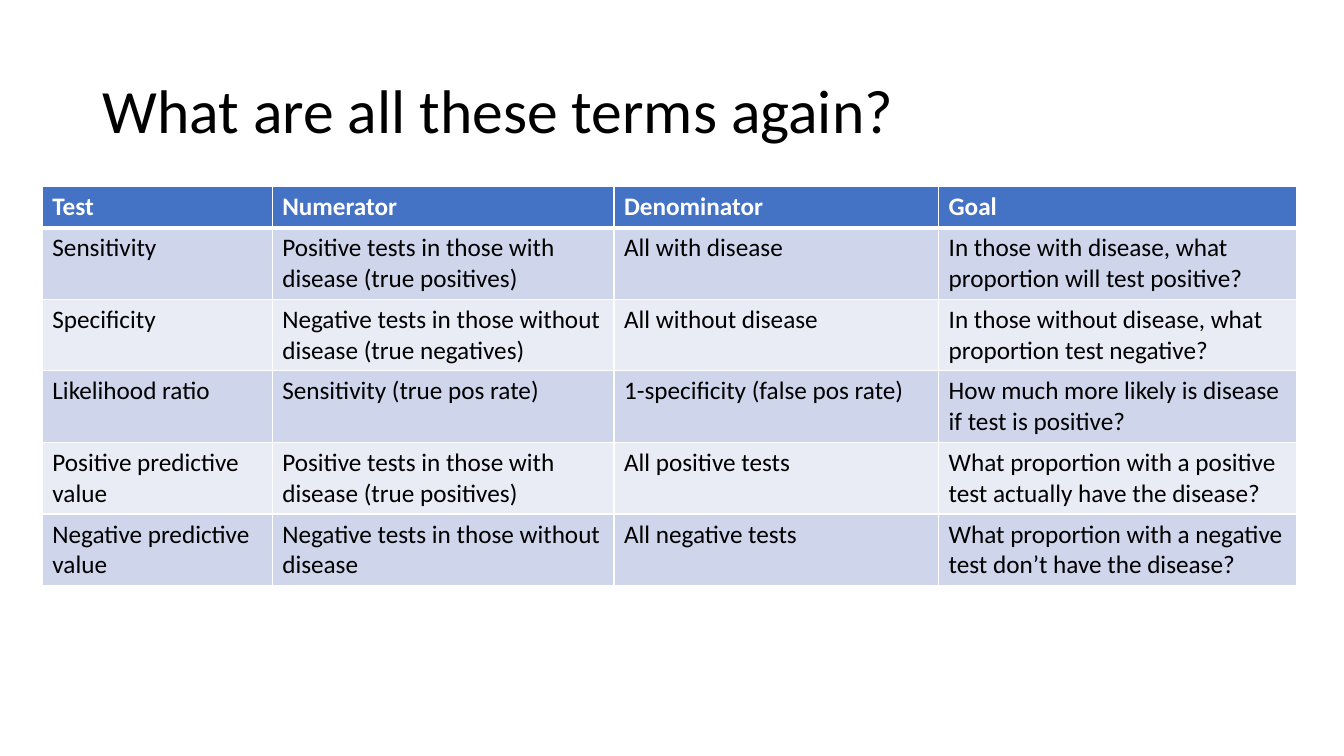
from dataclasses import dataclass

from lxml import etree
from pptx import Presentation
from pptx.dml.color import RGBColor
from pptx.enum.text import MSO_ANCHOR
from pptx.oxml.ns import qn
from pptx.util import Emu, Pt

MIDDLE = MSO_ANCHOR.MIDDLE
EMU_PER_PX = 9144
BLANK_LAYOUT = 6


@dataclass(frozen=True)
class Theme:
    font: str = "Calibri"
    title_size: int = 44
    table_size: int = 18
    text: str = "000000"
    header_text: str = "FFFFFF"
    header_fill: str = "4472C4"
    bands: tuple = ("CFD5EA", "E9EBF5")
    border: str = "FFFFFF"
    thin_line: int = 1
    thick_line: int = 3


THEME = Theme()

TITLE = "What are all these terms again?"
COLUMN_WIDTHS = (228, 339, 322, 355)
HEADER_HEIGHT = 41
BODY_HEIGHT = 71
TERMS = (
    ("Test", "Numerator", "Denominator", "Goal"),
    ("Sensitivity", "Positive tests in those with disease (true positives)",
     "All with disease",
     "In those with disease, what proportion will test positive?"),
    ("Specificity", "Negative tests in those without disease (true negatives)",
     "All without disease",
     "In those without disease, what proportion test negative?"),
    ("Likelihood ratio", "Sensitivity (true pos rate)",
     "1-specificity (false pos rate)",
     "How much more likely is disease if test is positive?"),
    ("Positive predictive value",
     "Positive tests in those with disease (true positives)",
     "All positive tests",
     "What proportion with a positive test actually have the disease?"),
    ("Negative predictive value", "Negative tests in those without disease",
     "All negative tests",
     "What proportion with a negative test don’t have the disease?"),
)


def px(length):
    return Emu(length * EMU_PER_PX)


def format_text(para, size, color, bold=False):
    for span in para.runs:
        span.font.name = THEME.font
        span.font.size = Pt(size)
        span.font.bold = bold
        span.font.color.rgb = RGBColor.from_string(color)


def add_title(page, text, left, top, width, height):
    box = page.shapes.add_textbox(px(left), px(top), px(width), px(height))
    frame = box.text_frame
    frame.word_wrap = True
    frame.vertical_anchor = MIDDLE
    frame.text = text
    para = frame.paragraphs[0]
    para.line_spacing = 0.9
    format_text(para, THEME.title_size, THEME.text)


def add_border(cell, side, width):
    properties = cell._tc.get_or_add_tcPr()
    line = etree.SubElement(properties, qn(f"a:ln{side}"), w=str(Pt(width)))
    fill = etree.SubElement(line, qn("a:solidFill"))
    etree.SubElement(fill, qn("a:srgbClr"), val=THEME.border)


def style_cell(cell, text, row_index):
    is_header = row_index == 0
    thick_side = {0: "B", 1: "T"}.get(row_index)
    for side in "LRTB":
        width = THEME.thick_line if side == thick_side else THEME.thin_line
        add_border(cell, side, width)
    band = THEME.bands[(row_index - 1) % len(THEME.bands)]
    cell.fill.solid()
    cell.fill.fore_color.rgb = RGBColor.from_string(
        THEME.header_fill if is_header else band)
    cell.text_frame.text = text
    color = THEME.header_text if is_header else THEME.text
    format_text(cell.text_frame.paragraphs[0], THEME.table_size, color, is_header)


def add_terms_table(page, left, top):
    height = HEADER_HEIGHT + BODY_HEIGHT * (len(TERMS) - 1)
    table = page.shapes.add_table(
        len(TERMS), len(COLUMN_WIDTHS), px(left), px(top),
        px(sum(COLUMN_WIDTHS)), px(height)).table
    for column, width in zip(table.columns, COLUMN_WIDTHS):
        column.width = px(width)
    for row_index, texts in enumerate(TERMS):
        row = table.rows[row_index]
        row.height = px(BODY_HEIGHT if row_index else HEADER_HEIGHT)
        for cell, text in zip(row.cells, texts):
            style_cell(cell, text, row_index)


def main():
    deck = Presentation()
    deck.slide_width = px(1333)
    deck.slide_height = px(750)
    page = deck.slides.add_slide(deck.slide_layouts[BLANK_LAYOUT])
    add_title(page, TITLE, 92, 40, 1150, 145)
    add_terms_table(page, 42, 185)
    deck.save("out.pptx")


if __name__ == "__main__":
    main()
